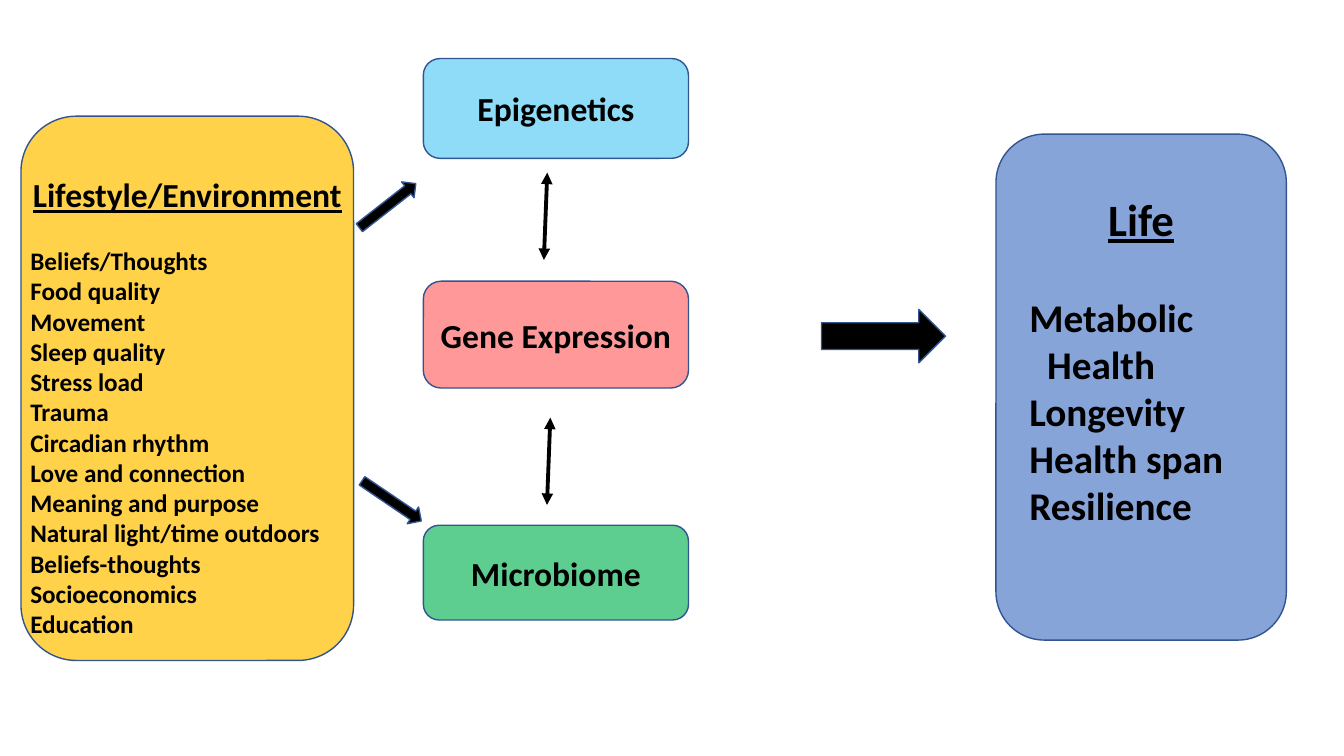
from dataclasses import dataclass

from lxml import etree
from pptx import Presentation
from pptx import util as u
from pptx.dml.color import RGBColor
from pptx.enum import shapes, text
from pptx.oxml import ns

Pt = u.Pt


@dataclass(frozen=True)
class Theme:
    """Colours, type sizes and line widths of the slide."""
    font: str = "Calibri"
    ink: str = "000000"
    outline: str = "325491"
    lifestyle: tuple = ("FFC000", 71)
    epigenetics: tuple = ("00B0F0", 44)
    expression: tuple = ("FF0000", 40)
    microbiome: tuple = ("00B050", 63)
    life: tuple = ("4472C4", 64)
    solid: tuple = ("000000", 100)
    label: int = 24
    factor: int = 18
    life_heading: int = 32
    outcome: int = 28
    outline_width: float = 1
    link_width: float = 2.75


THEME = Theme()
FACTORS = ["Beliefs/Thoughts", "Food quality", "Movement", "Sleep quality", "Stress load",
           "Trauma", "Circadian rhythm", "Love and connection", "Meaning and purpose",
           "Natural light/time outdoors", "Beliefs-thoughts", "Socioeconomics", "Education"]
OUTCOMES = ["Metabolic", "Health", "Longevity", "Health span", "Resilience"]


def add_block(slide, kind, box, colour, rotation=0):
    """Add an outlined preset shape filled with a (colour, opacity) pair."""
    block = slide.shapes.add_shape(kind, *map(Pt, box))
    block.shadow.inherit = False
    block.rotation = rotation
    block.fill.solid()
    block.fill.fore_color.rgb = RGBColor.from_string(colour[0])
    if colour[1] < 100:
        fill = block.fill._xPr.find(ns.qn("a:solidFill"))
        etree.SubElement(fill[0], ns.qn("a:alpha"), val=str(colour[1] * 1000))
    block.line.color.rgb = RGBColor.from_string(THEME.outline)
    block.line.width = Pt(THEME.outline_width)
    return block


def write(para, words, size, align=text.PP_ALIGN.LEFT, underline=False):
    """Put bold text in a paragraph."""
    para.text = words
    para.alignment = align
    para.font.name = THEME.font
    para.font.size = Pt(size)
    para.font.bold = True
    para.font.underline = underline
    para.font.color.rgb = RGBColor.from_string(THEME.ink)


def add_panel(slide, box, colour, inset, heading, heading_size, items, item_size, indents=()):
    """Add a rounded panel with an underlined heading above a list, inset left, top and right."""
    left, top, width, height = box
    add_block(slide, shapes.MSO_SHAPE.ROUNDED_RECTANGLE, box, colour)
    body = slide.shapes.add_textbox(Pt(left + inset[0]), Pt(top + inset[1]),
                                    Pt(width - 2 * inset[0]), Pt(height - 2 * inset[1]))
    frame = body.text_frame
    frame.word_wrap = True
    write(frame.paragraphs[0], heading, heading_size, text.PP_ALIGN.CENTER, True)
    for index, item in enumerate(items):
        para = frame.add_paragraph()
        if index == 0:
            para.space_before = Pt(item_size * 1.22)
        if item in indents:
            para._p.get_or_add_pPr().set("marL", str(Pt(12.7)))
        write(para, item, item_size)


def add_link(slide, start, end):
    """Add a line with an arrowhead at both ends."""
    link = slide.shapes.add_connector(shapes.MSO_CONNECTOR.STRAIGHT, *map(Pt, start + end))
    link.line.color.rgb = RGBColor.from_string(THEME.ink)
    link.line.width = Pt(THEME.link_width)
    line = link.line._get_or_add_ln()
    for tip in ("a:headEnd", "a:tailEnd"):
        etree.SubElement(line, ns.qn(tip), type="triangle")
    etree.SubElement(link._element.spPr, ns.qn("a:effectLst"))


def add_mechanisms(slide, box):
    """Add the column of three labelled nodes and the links between them."""
    left, top, width, _ = box
    nodes = [("Epigenetics", THEME.epigenetics, 0, 71.3),
             ("Gene Expression", THEME.expression, 159.1, 76.3),
             ("Microbiome", THEME.microbiome, 333.4, 67.7)]
    for label, colour, offset, height in nodes:
        node = add_block(slide, shapes.MSO_SHAPE.ROUNDED_RECTANGLE,
                         (left, top + offset, width, height), colour)
        node.text_frame.vertical_anchor = text.MSO_ANCHOR.MIDDLE
        write(node.text_frame.paragraphs[0], label, THEME.label, text.PP_ALIGN.CENTER)
    for across, down in ((88.5, 81.5), (90.7, 256.5)):
        add_link(slide, (left + across, top + down),
                 (left + across - 2.4, top + down + 62.4))


def add_flow(slide):
    """Add the block arrows that lead from the causes to the outcome."""
    arrows = [((251.3, 139.7, 51.1, 14.4), 322), ((254.2, 350.6, 51.1, 14.4), 34.1),
              ((586.8, 221, 88.6, 38.2), 0)]
    for box, rotation in arrows:
        add_block(slide, shapes.MSO_SHAPE.RIGHT_ARROW, box, THEME.solid, rotation)


def main():
    """Build and save the slide."""
    deck = Presentation()
    deck.slide_width, deck.slide_height = Pt(960), Pt(540)
    slide = deck.slides.add_slide(deck.slide_layouts[6])
    add_panel(slide, (15, 83, 237.6, 388.8), THEME.lifestyle, (-0.4, 38),
              "Lifestyle/Environment", THEME.label, FACTORS, THEME.factor)
    add_mechanisms(slide, (302.4, 41.8, 189.4, 401.1))
    add_flow(slide)
    add_panel(slide, (711.4, 95.8, 207.4, 361.4), THEME.life, (16.8, 37.4),
              "Life", THEME.life_heading, OUTCOMES, THEME.outcome, ("Health",))
    deck.save("out.pptx")


if __name__ == "__main__":
    main()
